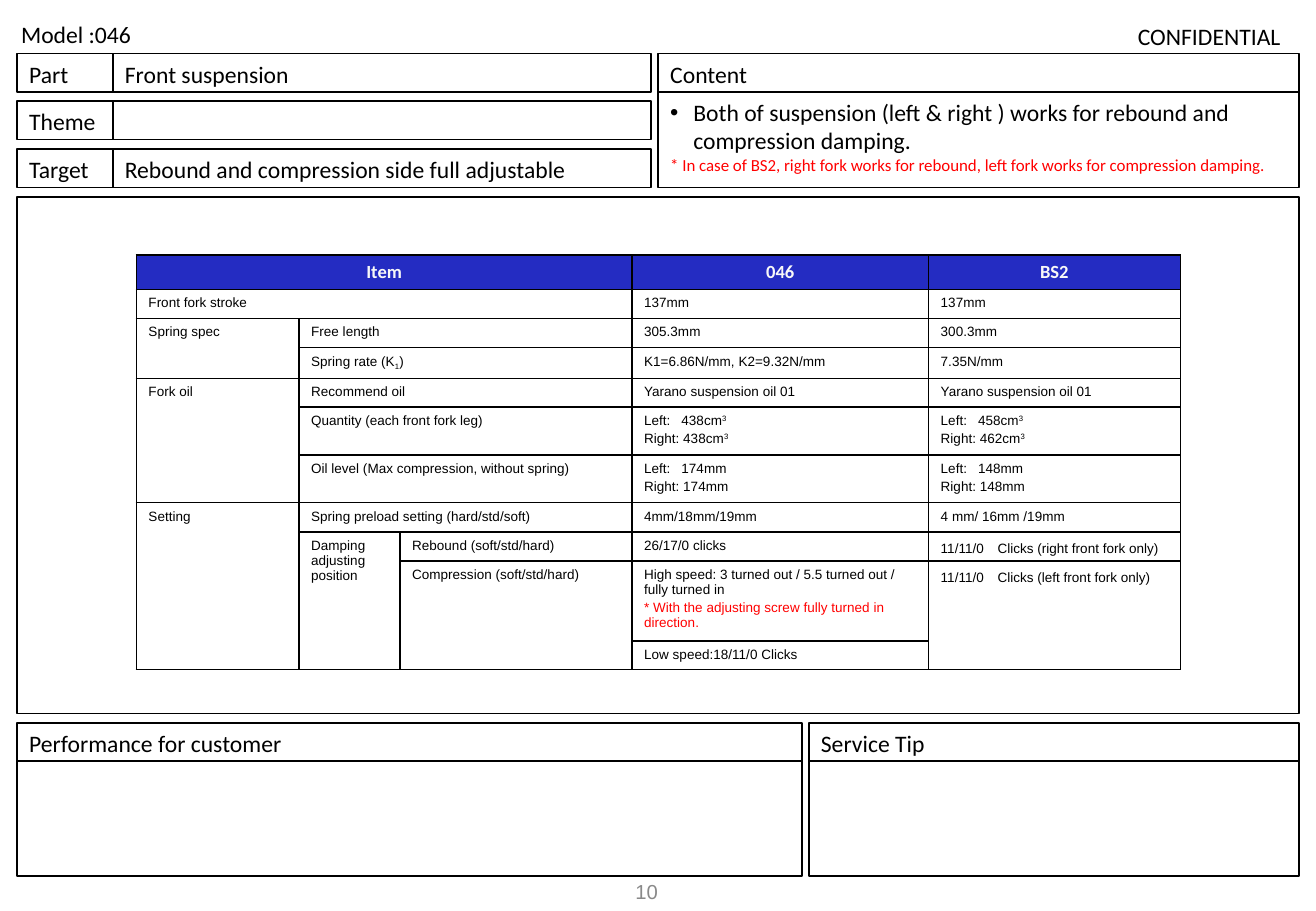
from dataclasses import dataclass, field

from lxml import etree
from pptx import Presentation
from pptx import util as u
from pptx.dml.color import RGBColor
from pptx.enum import shapes, text
from pptx.oxml import ns


@dataclass(frozen=True)
class Theme:
    ink: str = "000000"
    alert: str = "FF0000"
    header: str = "242CC2"
    header_ink: str = "F8F8F8"
    paper: str = "FFFFFF"
    muted: str = "898989"
    heading: str = "Calibri"
    body: str = "Arial"
    label_pt: float = 14
    page_pt: float = 12
    header_pt: float = 11
    note_pt: float = 10
    cell_pt: float = 8
    line_pt: float = 1


@dataclass(frozen=True)
class Run:
    text: str
    baseline: int = 0


@dataclass(frozen=True)
class Para:
    runs: tuple
    font: str = "Calibri"
    size: float = 14
    color: str = "000000"
    bold: bool = False
    fmt: dict = field(default_factory=dict)


@dataclass(frozen=True)
class Box:
    """A place on the page grid, in columns and rows."""
    col: float
    row: float
    cols: float
    rows: float


@dataclass(frozen=True)
class Panel:
    label: str
    box: Box
    column_rule: bool = False
    row_rule: bool = False


@dataclass(frozen=True)
class Cell:
    row: int
    col: int
    paras: tuple
    rows: int = 1
    cols: int = 1


T = Theme()
UNIT = u.Cm(1)
LEFT, TOP = u.Cm(0.36), u.Cm(1.12)
BAR, LABEL_COLS = 0.8, 2
ALIGN = text.PP_ALIGN

PANELS = [
    Panel("Part", Box(0, 0, 13.25, BAR), column_rule=True),
    Panel("Theme", Box(0, 1, 13.25, BAR), column_rule=True),
    Panel("Target", Box(0, 2, 13.25, BAR), column_rule=True),
    Panel("Content", Box(13.4, 0, 13.4, 2 + BAR), row_rule=True),
    Panel("", Box(0, 3, 26.8, 10 + BAR)),
    Panel("Performance for customer", Box(0, 14, 16.4, 3.2), row_rule=True),
    Panel("Service Tip", Box(16.55, 14, 10.25, 3.2), row_rule=True),
]

TABLE_AT = (2.49, 4.21)
COLUMNS = [3.4, 2.11, 4.85, 6.2, 5.26]
ROWS = [0.71, 0.61, 0.61, 0.64, 0.6, 1, 1, 0.61, 0.61, 1.67, 0.6]
OIL = "Yarano suspension oil 01"


def cubic(value: str) -> tuple:
    return Run(value + "cm"), Run("3", 30)


def sides(left: tuple, right: tuple) -> tuple:
    """Left and right fork values, lined up by a tab stop."""
    return (Run("Left:\t"), *left), (Run("Right: "), *right)


def volumes(left: str, right: str) -> tuple:
    return sides(cubic(left), cubic(right))


def levels(value: str) -> tuple:
    return sides((Run(value),), (Run(value),))


CELLS = [
    Cell(0, 0, ("Item",), cols=3), Cell(0, 3, ("046",)), Cell(0, 4, ("BS2",)),
    Cell(1, 0, ("Front fork stroke",), cols=3),
    Cell(1, 3, ("137mm",)), Cell(1, 4, ("137mm",)),
    Cell(2, 0, ("Spring spec",), rows=2), Cell(2, 1, ("Free length",), cols=2),
    Cell(2, 3, ("305.3mm",)), Cell(2, 4, ("300.3mm",)),
    Cell(3, 1, ((Run("Spring rate (K"), Run("1", -25), Run(")")),), cols=2),
    Cell(3, 3, ("K1=6.86N/mm, K2=9.32N/mm",)), Cell(3, 4, ("7.35N/mm",)),
    Cell(4, 0, ("Fork oil",), rows=3), Cell(4, 1, ("Recommend oil",), cols=2),
    Cell(4, 3, (OIL,)), Cell(4, 4, (OIL,)),
    Cell(5, 1, ("Quantity (each front fork leg)",), cols=2),
    Cell(5, 3, volumes("438", "438")), Cell(5, 4, volumes("458", "462")),
    Cell(6, 1, ("Oil level (Max compression, without spring)",), cols=2),
    Cell(6, 3, levels("174mm")), Cell(6, 4, levels("148mm")),
    Cell(7, 0, ("Setting",), rows=4),
    Cell(7, 1, ("Spring preload setting (hard/std/soft)",), cols=2),
    Cell(7, 3, ("4mm/18mm/19mm",)), Cell(7, 4, ("4 mm/ 16mm /19mm",)),
    Cell(8, 1, ("Damping adjusting position",), rows=3),
    Cell(8, 2, ("Rebound (soft/std/hard)",)), Cell(8, 3, ("26/17/0 clicks",)),
    Cell(8, 4, ("11/11/0　Clicks (right front fork only)",)),
    Cell(9, 2, ("Compression (soft/std/hard)",), rows=2),
    Cell(9, 3, ("High speed: 3 turned out / 5.5 turned out / fully turned in",
                "* With the adjusting screw fully turned in direction.")),
    Cell(9, 4, ("11/11/0　Clicks (left front fork only)",), rows=2),
    Cell(10, 3, ("Low speed:18/11/0 Clicks",)),
]


def rgb(color: str) -> RGBColor:
    return RGBColor.from_string(color)


def grid(n: float) -> int:
    return round(n * UNIT)


def area(b: Box) -> tuple:
    return LEFT + grid(b.col), TOP + grid(b.row), grid(b.cols), grid(b.rows)


def apply(target, fmt: dict) -> None:
    for name, value in fmt.items():
        setattr(target, name, value)


def write(tf, paras: list, **frame) -> None:
    apply(tf, {"word_wrap": True, "vertical_anchor": text.MSO_ANCHOR.TOP, **frame})
    for i, para in enumerate(paras):
        p = tf.add_paragraph() if i else tf.paragraphs[0]
        apply(p, {"alignment": ALIGN.LEFT, **para.fmt})
        for run in para.runs:
            r = p.add_run()
            r.text = run.text
            apply(r.font, {"name": para.font, "size": u.Pt(para.size), "bold": para.bold})
            r.font.color.rgb = rgb(para.color)
            if run.baseline:
                r.font._element.set("baseline", str(run.baseline * 1000))


def label(s, value: str, box: Box, fmt: dict = {}, **frame) -> None:
    write(s.shapes.add_textbox(*area(box)).text_frame, [Para((Run(value),), fmt=fmt)], **frame)


def rule(s, x: float, y: float, x2: float, y2: float) -> None:
    ends = [LEFT + grid(x), TOP + grid(y), LEFT + grid(x2), TOP + grid(y2)]
    line = s.shapes.add_connector(shapes.MSO_CONNECTOR.STRAIGHT, *ends)
    line.line.color.rgb, line.line.width = rgb(T.ink), u.Pt(T.line_pt)
    etree.SubElement(line._element.spPr, ns.qn("a:effectLst"))


def draw_panel(s, panel: Panel) -> None:
    b = panel.box
    sp = s.shapes.add_shape(shapes.MSO_SHAPE.RECTANGLE, *area(b))
    sp.shadow.inherit = False
    sp.fill.background()
    sp.line.color.rgb, sp.line.width = rgb(T.ink), u.Pt(T.line_pt)
    if panel.label:
        write(sp.text_frame, [Para((Run(panel.label),))])
    if panel.column_rule:
        rule(s, b.col + LABEL_COLS, b.row, b.col + LABEL_COLS, b.row + b.rows)
    if panel.row_rule:
        rule(s, b.col, b.row + BAR, b.col + b.cols, b.row + BAR)


def add_borders(cell) -> None:
    props = cell._tc.get_or_add_tcPr()
    for side in ("lnL", "lnR", "lnT", "lnB"):
        ln = etree.SubElement(props, ns.qn("a:" + side), w=str(u.Pt(T.line_pt)))
        fill = etree.SubElement(ln, ns.qn("a:solidFill"))
        etree.SubElement(fill, ns.qn("a:srgbClr"), val=T.ink)


def cell_para(content, index: int, header: bool) -> Para:
    runs = (Run(content),) if isinstance(content, str) else content
    if header:
        return Para(runs, T.heading, T.header_pt, T.header_ink, True, {"alignment": ALIGN.CENTER})
    color = T.alert if runs[0].text.startswith("*") else T.ink
    return Para(runs, T.body, T.cell_pt, color, fmt={"space_before": u.Pt(1.6 if index else 0)})


def draw_table(s) -> None:
    box = Box(*TABLE_AT, sum(COLUMNS), sum(ROWS))
    table = s.shapes.add_table(len(ROWS), len(COLUMNS), *area(box)).table
    apply(table, {"first_row": False, "horz_banding": False})
    for column, width in zip(table.columns, COLUMNS):
        column.width = grid(width)
    for i, (row, height) in enumerate(zip(table.rows, ROWS)):
        row.height = grid(height)
        for cell in row.cells:
            add_borders(cell)
            cell.fill.solid()
            cell.fill.fore_color.rgb = rgb(T.paper if i else T.header)
    for c in CELLS:
        cell = table.cell(c.row, c.col)
        if c.rows * c.cols > 1:
            cell.merge(table.cell(c.row + c.rows - 1, c.col + c.cols - 1))
        write(cell.text_frame, [cell_para(x, i, c.row == 0) for i, x in enumerate(c.paras)])
        for p in cell.text_frame.paragraphs:
            if "\t" in p.text:
                tabs = etree.SubElement(p._p.get_or_add_pPr(), ns.qn("a:tabLst"))
                etree.SubElement(tabs, ns.qn("a:tab"), pos=str(grid(0.78)), algn="l")


def draw_content(s) -> None:
    tf = s.shapes.add_textbox(*area(Box(13.4, BAR, 13.25, 2.5))).text_frame
    point = "Both of suspension (left & right ) works for rebound and compression damping."
    note = "* In case of BS2, right fork works for rebound, left fork works for compression damping."
    write(tf, [Para((Run(point),)), Para((Run(note),), size=T.note_pt, color=T.alert)])
    props = tf.paragraphs[0]._p.get_or_add_pPr()
    indent = u.Inches(0.19)
    props.set("marL", str(indent))
    props.set("indent", str(-indent))
    etree.SubElement(props, ns.qn("a:buFont"), typeface=T.body)
    etree.SubElement(props, ns.qn("a:buChar"), char="•")


def main() -> None:
    prs = Presentation()
    apply(prs, {"slide_width": u.Inches(10.83), "slide_height": u.Inches(7.5)})
    s = prs.slides.add_slide(prs.slide_layouts[5])
    flush = dict.fromkeys(("margin_left", "margin_top", "margin_right", "margin_bottom"), 0)
    title = s.shapes.title
    apply(title, dict(zip(("left", "top", "width", "height"), area(Box(0.08, -0.71, 13.94, 0.69)))))
    write(title.text_frame, [Para((Run("Model :046"),))],
          auto_size=text.MSO_AUTO_SIZE.NONE, **flush)
    for panel in PANELS:
        draw_panel(s, panel)
    label(s, "CONFIDENTIAL", Box(22.5, -0.66, 3.91, 0.64), {"alignment": ALIGN.RIGHT}, **flush)
    label(s, "Front suspension", Box(LABEL_COLS, 0, 11, BAR))
    label(s, "Rebound and compression side full adjustable", Box(LABEL_COLS, 2, 11, BAR))
    draw_content(s)
    draw_table(s)
    page = Para((Run("10"),), T.body, T.page_pt, T.muted, fmt={"alignment": ALIGN.RIGHT})
    write(s.shapes.add_textbox(*area(Box(7.21, 17.02, 6.43, 1.02))).text_frame, [page],
          vertical_anchor=text.MSO_ANCHOR.MIDDLE)
    prs.save("out.pptx")


if __name__ == "__main__":
    main()
